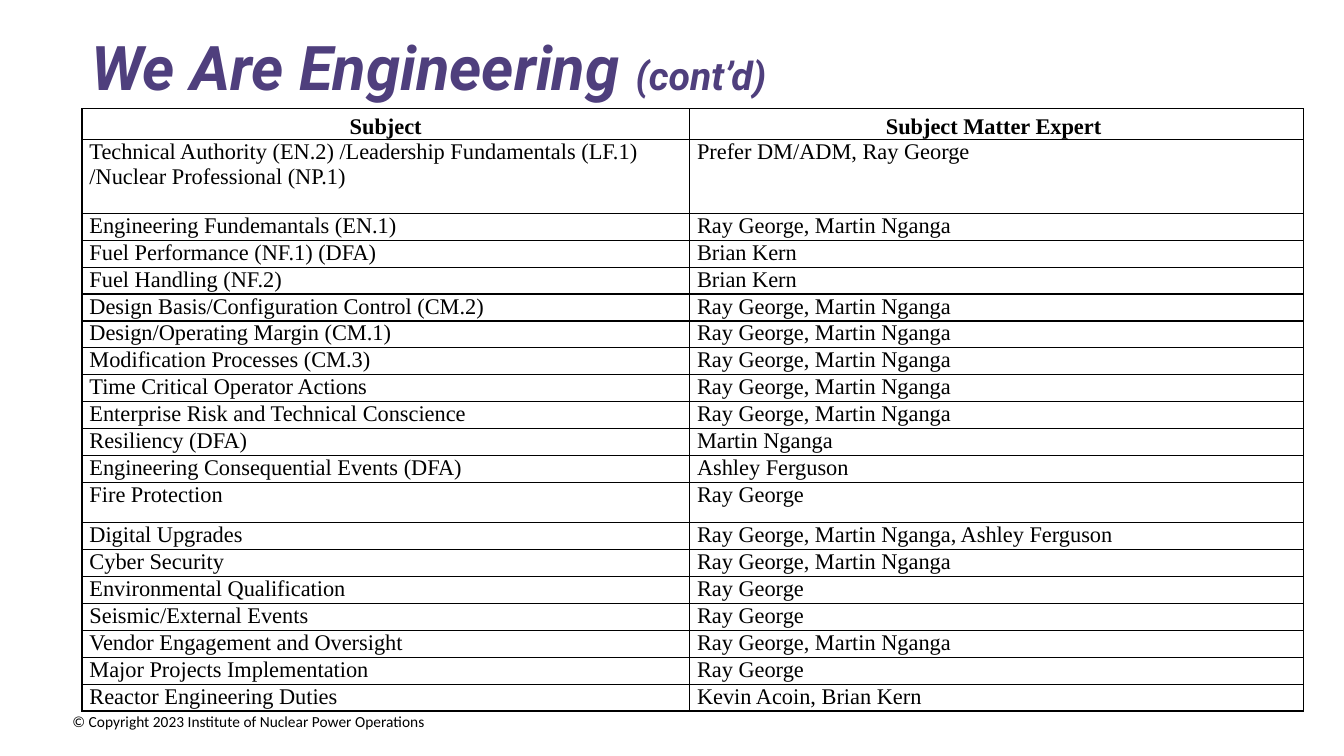
import pptx
import pptx.util
import pptx.dml.color
import pptx.enum.text
import pptx.oxml
import pptx.oxml.ns

Pt = pptx.util.Pt
ANCHOR = pptx.enum.text.MSO_ANCHOR
ALIGN = pptx.enum.text.PP_ALIGN

HEADER = ("Subject", "Subject Matter Expert ")
EXPERTS = [
    ("Technical Authority (EN.2) /Leadership Fundamentals (LF.1) /Nuclear Professional (NP.1)",
     "Prefer DM/ADM, Ray George"),
    ("Engineering Fundemantals (EN.1)", "Ray George, Martin Nganga"),
    ("Fuel Performance (NF.1) (DFA)", "Brian Kern"),
    ("Fuel Handling (NF.2)", "Brian Kern"),
    ("Design Basis/Configuration Control (CM.2)", "Ray George, Martin Nganga"),
    ("Design/Operating Margin (CM.1)", "Ray George, Martin Nganga"),
    ("Modification Processes (CM.3)", "Ray George, Martin Nganga"),
    ("Time Critical Operator Actions", "Ray George, Martin Nganga"),
    ("Enterprise Risk and Technical Conscience", "Ray George, Martin Nganga"),
    ("Resiliency (DFA)", "Martin Nganga"),
    ("Engineering Consequential Events (DFA)", "Ashley Ferguson"),
    ("Fire Protection", "Ray George"),
    ("Digital Upgrades", "Ray George, Martin Nganga, Ashley Ferguson"),
    ("Cyber Security", "Ray George, Martin Nganga"),
    ("Environmental Qualification", "Ray George"),
    ("Seismic/External Events", "Ray George"),
    ("Vendor Engagement and Oversight", "Ray George, Martin Nganga"),
    ("Major Projects Implementation", "Ray George"),
    ("Reactor Engineering Duties", "Kevin Acoin, Brian Kern"),
]
ROW_HEIGHT = 17.5
TALL_ROWS = {"Subject": 22.3, EXPERTS[0][0]: 52.5, "Fire Protection": 28.8}


def color(value):
    return pptx.dml.color.RGBColor.from_string(value)


def assign(target, values):
    for name, value in values.items():
        setattr(target, name, value)


class SlideBuilder:
    ink = "000000"
    title_color = "4F3F7D"
    title_font = {"name": "Roboto", "bold": True, "italic": True}
    footer_font = {"name": "Calibri", "size": Pt(11)}
    cell_font = {"name": "Times New Roman", "size": Pt(16)}
    cell_margins = {"margin_left": Pt(5.4), "margin_right": Pt(5.4),
                    "margin_top": 0, "margin_bottom": 0}

    def __init__(self, deck):
        self.slide = deck.slides.add_slide(deck.slide_layouts[6])

    def span(self, para, text, ink, font):
        span = para.add_run()
        span.text = text
        assign(span.font, font)
        span.font.color.rgb = color(ink)

    def text(self, left, top, width, height, spans, ink, spacing=1.0):
        box = self.slide.shapes.add_textbox(Pt(left), Pt(top), Pt(width), Pt(height))
        assign(box.text_frame, {"word_wrap": True, "vertical_anchor": ANCHOR.MIDDLE,
                                "auto_size": pptx.enum.text.MSO_AUTO_SIZE.SHAPE_TO_FIT_TEXT})
        para = box.text_frame.paragraphs[0]
        para.line_spacing = spacing
        for text, font in spans:
            self.span(para, text, ink, font)

    def border(self, cell):
        properties = cell._tc.get_or_add_tcPr()
        for index, side in enumerate("LRTB"):
            properties.insert(index, pptx.oxml.parse_xml(
                f'<a:ln{side} {pptx.oxml.ns.nsdecls("a")} w="{Pt(1)}"><a:solidFill>'
                f'<a:srgbClr val="{self.ink}"/></a:solidFill></a:ln{side}>'))

    def cell(self, cell, text, header):
        cell.fill.background()
        self.border(cell)
        assign(cell, self.cell_margins)
        cell.vertical_anchor = ANCHOR.BOTTOM if header else ANCHOR.TOP
        para = cell.text_frame.paragraphs[0]
        para.alignment = ALIGN.CENTER if header else ALIGN.LEFT
        self.span(para, text, self.ink, {**self.cell_font, "bold": header})

    def table(self, left, top, widths, rows):
        heights = [TALL_ROWS.get(row[0], ROW_HEIGHT) for row in rows]
        frame = self.slide.shapes.add_table(len(rows), len(widths), Pt(left), Pt(top),
                                            Pt(sum(widths)), Pt(sum(heights)))
        table = frame.table
        assign(table, {"first_row": False, "horz_banding": False})
        for column, width in zip(table.columns, widths):
            column.width = Pt(width)
        for row_index, (texts, height) in enumerate(zip(rows, heights)):
            table.rows[row_index].height = Pt(height)
            for column_index, text in enumerate(texts):
                self.cell(table.cell(row_index, column_index), text, row_index == 0)


def main():
    deck = pptx.Presentation()
    assign(deck, {"slide_width": Pt(960), "slide_height": Pt(540)})
    page = SlideBuilder(deck)
    page.text(44.6, 504.7, 277.2, 20.9,
              [("© Copyright 2023 Institute of Nuclear Power Operations", page.footer_font)],
              page.ink)
    page.text(58.3, 27.4, 843, 49.7,
              [("We Are Engineering ", {**page.title_font, "size": Pt(44)}),
               ("(cont’d)", {**page.title_font, "size": Pt(28)})],
              page.title_color, 0.8)
    page.table(58.5, 77.6, [434, 438.5], [HEADER, *EXPERTS])
    deck.save("out.pptx")


if __name__ == "__main__":
    main()
